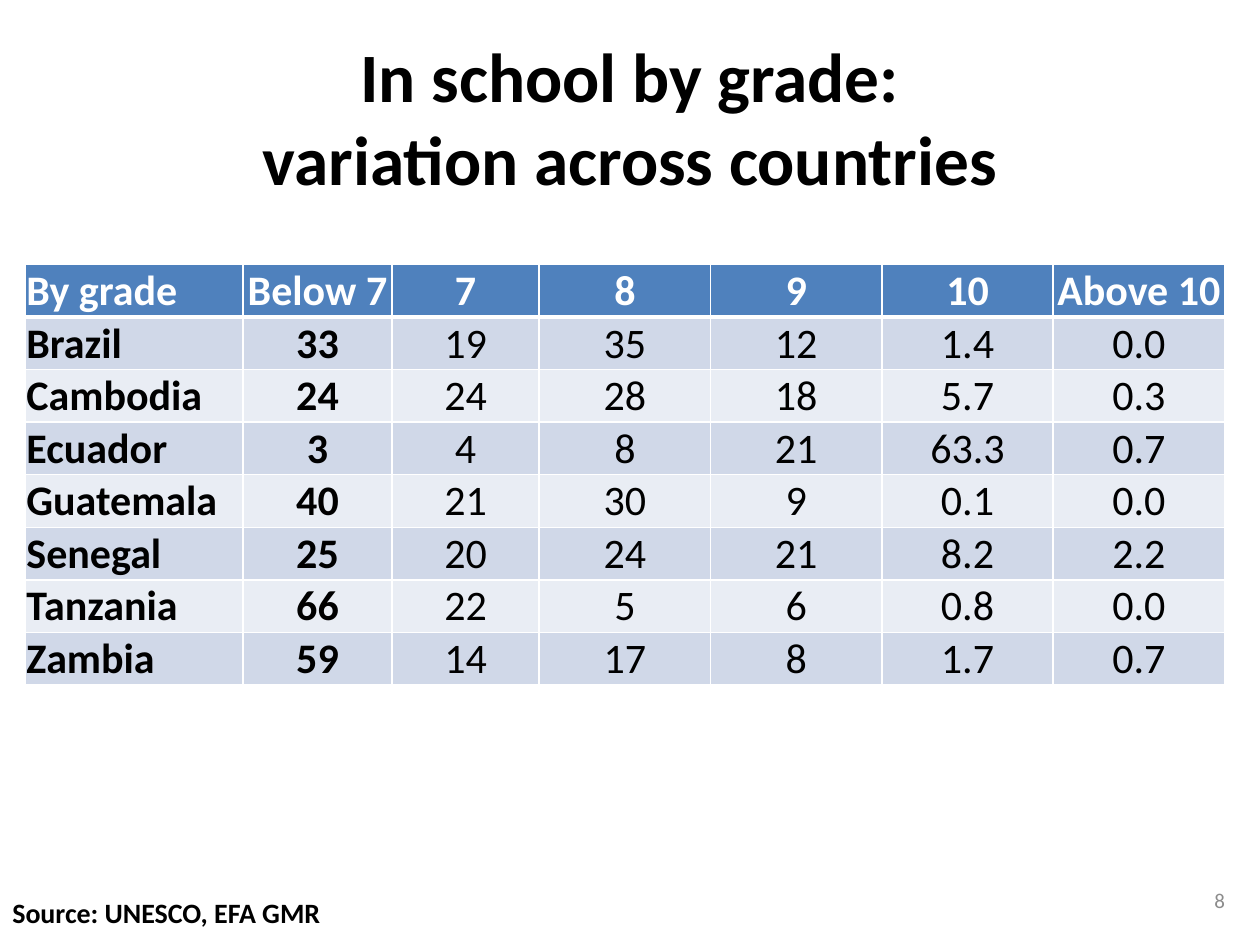
from dataclasses import dataclass

from lxml.etree import SubElement
from pptx import Presentation
from pptx.dml.color import RGBColor as Color
from pptx.enum.text import MSO_ANCHOR as Anchor
from pptx.enum.text import MSO_AUTO_SIZE as Fit
from pptx.enum.text import PP_ALIGN as Align
from pptx.oxml.ns import qn
from pptx.util import Inches, Pt


@dataclass(frozen=True)
class Theme:
    """Colours and type sizes of the slide."""
    face: str = "Calibri"
    ink: str = "000000"
    paper: str = "FFFFFF"
    gray: str = "8C8C8C"
    head: str = "4F81BD"
    bands: tuple = ("D0D8E8", "E9EDF4")
    title: float = 39.6
    cell: float = 24
    note: float = 16
    page: float = 12


THEME = Theme()
GRADES = [
    ("By grade", "Below 7", "7", "8", "9", "10", "Above 10"),
    ("Brazil", "33", "19", "35", "12", "1.4", "0.0"),
    ("Cambodia", "24", "24", "28", "18", "5.7", "0.3"),
    ("Ecuador", "3", "4", "8", "21", "63.3", "0.7"),
    ("Guatemala", "40", "21", "30", "9", "0.1", "0.0"),
    ("Senegal", "25", "20", "24", "21", "8.2", "2.2"),
    ("Tanzania", "66", "22", "5", "6", "0.8", "0.0"),
    ("Zambia", "59", "14", "17", "8", "1.7", "0.7"),
]
WIDTHS = [1.73, 1.18, 1.17] + [1.36] * 4


def style(para, size, color, bold=False, align=Align.LEFT):
    """Set the font and alignment of a paragraph."""
    font = para.font
    font.name, font.size, font.bold = THEME.face, Pt(size), bold
    font.color.rgb = Color.from_string(color)
    para.alignment = align


def place(shape, box):
    """Move a shape to a box given in inches."""
    shape.left, shape.top, shape.width, shape.height = map(Inches, box)


def add_title(slide, box, text):
    """Fill the title placeholder."""
    title = slide.shapes.title
    place(title, box)
    frame = title.text_frame
    frame.text = text
    frame.auto_size = Fit.NONE
    frame.vertical_anchor = Anchor.MIDDLE
    style(frame.paragraphs[0], THEME.title, THEME.ink, True, Align.CENTER)


def add_label(slide, box, text, size, color, bold=False,
              align=Align.LEFT, anchor=Anchor.TOP):
    """Add one line of small text."""
    frame = slide.shapes.add_textbox(*map(Inches, box)).text_frame
    frame.word_wrap = True
    frame.vertical_anchor = anchor
    frame.text = text
    style(frame.paragraphs[0], size, color, bold, align)


def add_edges(cell, base):
    """Draw the white borders of a cell."""
    props = cell._tc.get_or_add_tcPr()
    for pos, (side, width) in enumerate(zip("LRTB", (1, 1, 1, base))):
        line = SubElement(props, qn(f"a:ln{side}"), w=str(Pt(width)))
        fill = SubElement(line, qn("a:solidFill"))
        SubElement(fill, qn("a:srgbClr"), val=THEME.paper)
        props.insert(pos, line)


def fill_cell(cell, row, col, text):
    """Write and format one cell by its place in the grid."""
    head = row == 0
    cell.text = text
    cell.margin_left = cell.margin_right = cell.margin_top = Inches(0.01)
    cell.margin_bottom = 0
    cell.vertical_anchor = Anchor.BOTTOM if head and col == 0 else Anchor.MIDDLE
    cell.fill.solid()
    shade = THEME.head if head else THEME.bands[(row - 1) % 2]
    cell.fill.fore_color.rgb = Color.from_string(shade)
    add_edges(cell, 3 if head else 1)
    style(cell.text_frame.paragraphs[0], THEME.cell,
          THEME.paper if head else THEME.ink, head or col < 2,
          Align.CENTER if col else Align.LEFT)


def add_grid(slide, box, rows, widths):
    """Add the table of countries by grade."""
    table = slide.shapes.add_table(
        len(rows), len(widths), *map(Inches, box)).table
    for col, width in zip(table.columns, widths):
        col.width = Inches(width)
    for row, texts in enumerate(rows):
        for col, text in enumerate(texts):
            fill_cell(table.cell(row, col), row, col, text)


def main():
    """Build and save the slide."""
    deck = Presentation()
    deck.slide_width, deck.slide_height = Inches(10), Inches(7.5)
    slide = deck.slides.add_slide(deck.slide_layouts[5])
    add_grid(slide, (0.2, 2.1, 9.53, 3.33), GRADES, WIDTHS)
    add_label(slide, (9.45, 7.01, 0.37, 0.27), "8", THEME.page, THEME.gray,
              align=Align.RIGHT, anchor=Anchor.MIDDLE)
    add_title(slide, (0.5, 0.3, 9, 1.25),
              "In school by grade:\vvariation across countries")
    add_label(slide, (0, 7.06, 10, 0.36), "Source: UNESCO, EFA GMR",
              THEME.note, THEME.ink, True)
    deck.save("out.pptx")


if __name__ == "__main__":
    main()
